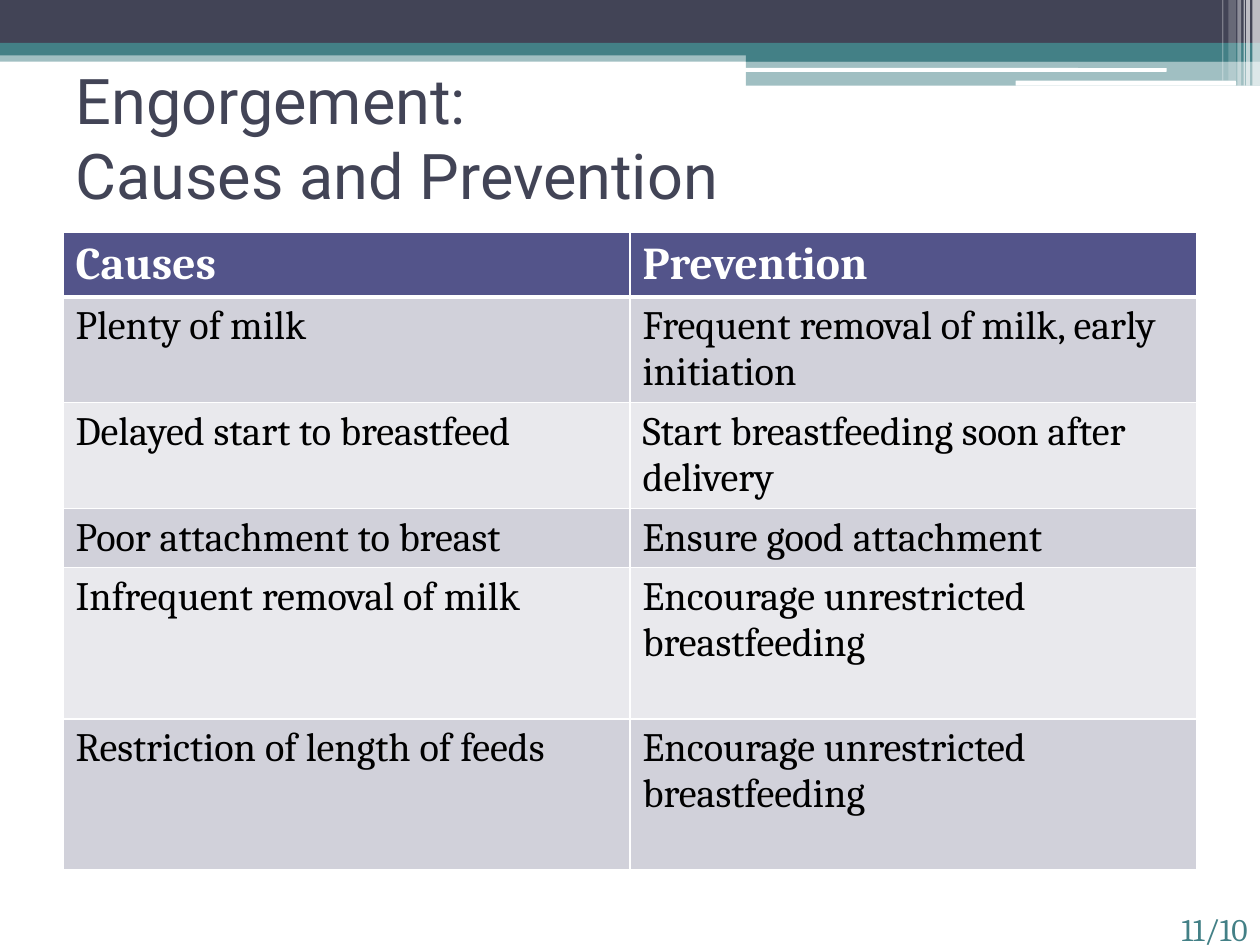
import lxml.etree
import pptx
import pptx.dml.color
import pptx.enum.shapes
import pptx.enum.text
import pptx.oxml.ns
import pptx.util

Inches = pptx.util.Inches
SHAPES = pptx.enum.shapes.MSO_SHAPE
ANCHORS = pptx.enum.text.MSO_ANCHOR
ALIGNMENTS = pptx.enum.text.PP_ALIGN
qn = pptx.oxml.ns.qn
WIDTH, HEIGHT = 10, 7.5
NAVY, TEAL, WHITE = "424456", "438086", "FFFFFF"


def color(hex_string):
    return pptx.dml.color.RGBColor.from_string(hex_string)


def style_text(text_frame, font_name, size, hex_string, bold=False):
    for paragraph in text_frame.paragraphs:
        for run in paragraph.runs:
            run.font.name = font_name
            run.font.size = pptx.util.Pt(size)
            run.font.bold = bold
            run.font.color.rgb = color(hex_string)


presentation = pptx.Presentation()
presentation.slide_width = Inches(WIDTH)
presentation.slide_height = Inches(HEIGHT)
slide = presentation.slides.add_slide(presentation.slide_layouts[5])

# Header bands, then the thin rules and the vertical stripes at the right edge:
# left, top, width, height, colour, opacity in percent
right_start = 5.92
right_width = WIDTH - right_start
bands = [
    (0, 0.4, WIDTH, 0.09, TEAL, 50),
    (0, 0, WIDTH, 0.34, NAVY, 100),
    (0, 0.34, WIDTH, 0.1, TEAL, 100),
    (right_start, 0.39, right_width, 0.1, TEAL, 100),
    (right_start, 0.48, right_width, 0.2, TEAL, 50),
]
rules = [
    (5.91, 0.54, 3.35, 0.03, WHITE, 100),
    (8.06, 0.64, 1.75, 0.04, WHITE, 100),
]
stripes = [
    (left, 0, width, height, WHITE, opacity)
    for left, width, height, opacity in [
        (9.94, 0.06, 0.68, 65),
        (9.89, 0.03, 0.68, 65),
        (9.87, 0.01, 0.68, 60),
        (9.82, 0.03, 0.68, 40),
        (9.75, 0.06, 0.64, 20),
        (9.7, 0.01, 0.64, 30),
    ]
]
for left, top, width, height, hex_string, opacity in bands + rules + stripes:
    is_rule = (left, top, width, height, hex_string, opacity) in rules
    preset = SHAPES.ROUNDED_RECTANGLE if is_rule else SHAPES.RECTANGLE
    shape = slide.shapes.add_shape(
        preset, Inches(left), Inches(top), Inches(width), Inches(height))
    shape.shadow.inherit = False
    shape.line.fill.background()
    shape.fill.solid()
    shape.fill.fore_color.rgb = color(hex_string)
    if opacity < 100:
        fill_color = shape.fill._xPr.find(qn("a:solidFill"))[0]
        lxml.etree.SubElement(fill_color, qn("a:alpha"), val=str(opacity * 1000))

# Title
margin = WIDTH / 20
content_width = WIDTH - 2 * margin
title = slide.shapes.title
title.left, title.top = Inches(margin), Inches(0.5)
title.width, title.height = Inches(content_width), Inches(1.17)
title.text_frame.text = "Engorgement:\vCauses and Prevention"
title.text_frame.auto_size = pptx.enum.text.MSO_AUTO_SIZE.NONE
title.text_frame.vertical_anchor = ANCHORS.MIDDLE
title.text_frame.paragraphs[0].alignment = ALIGNMENTS.LEFT
style_text(title.text_frame, "Roboto", 36, NAVY)

# Table of causes and prevention
rows = [
    ("Causes", "Prevention", 0.5),
    ("Plenty of milk", "Frequent removal of milk, early initiation", 0.84),
    ("Delayed start to breastfeed", "Start breastfeeding soon after delivery", 0.84),
    ("Poor attachment to breast", "Ensure good attachment", 0.47),
    ("Infrequent removal of milk", "Encourage unrestricted breastfeeding", 1.2),
    ("Restriction of length of feeds", "Encourage unrestricted breastfeeding", 1.2),
]
table_height = sum(row[2] for row in rows)
table = slide.shapes.add_table(
    len(rows), 2, Inches(margin), Inches(1.84),
    Inches(content_width), Inches(table_height)).table
for row_index, (cause, prevention, height) in enumerate(rows):
    table.rows[row_index].height = Inches(height)
    is_header = row_index == 0
    for column_index, text in enumerate((cause, prevention)):
        cell = table.cell(row_index, column_index)
        cell.text_frame.text = text
        style_text(cell.text_frame, "Cambria", 26 if is_header else 23,
                   WHITE if is_header else "000000", is_header)
        cell_properties = cell._tc.get_or_add_tcPr()
        for side in ("L", "R", "T", "B"):
            beside_header = (row_index, side) in ((0, "B"), (1, "T"))
            border = lxml.etree.SubElement(
                cell_properties, qn("a:ln" + side),
                w=str(pptx.util.Pt(3 if beside_header else 1)))
            border_fill = lxml.etree.SubElement(border, qn("a:solidFill"))
            lxml.etree.SubElement(border_fill, qn("a:srgbClr"), val=WHITE)
        cell.fill.solid()
        body_color = "D1D1DA" if row_index % 2 else "E9E9ED"
        cell.fill.fore_color.rgb = color("53548A" if is_header else body_color)

# Page number in the bottom right corner
number_width, number_height = 1.42, 0.33
page_number = slide.shapes.add_textbox(
    Inches(WIDTH - number_width), Inches(HEIGHT - number_height),
    Inches(number_width), Inches(number_height))
page_number.text_frame.word_wrap = True
page_number.text_frame.text = "11/10"
page_number.text_frame.paragraphs[0].alignment = ALIGNMENTS.RIGHT
style_text(page_number.text_frame, "Cambria", 18, TEAL)

presentation.save("out.pptx")
